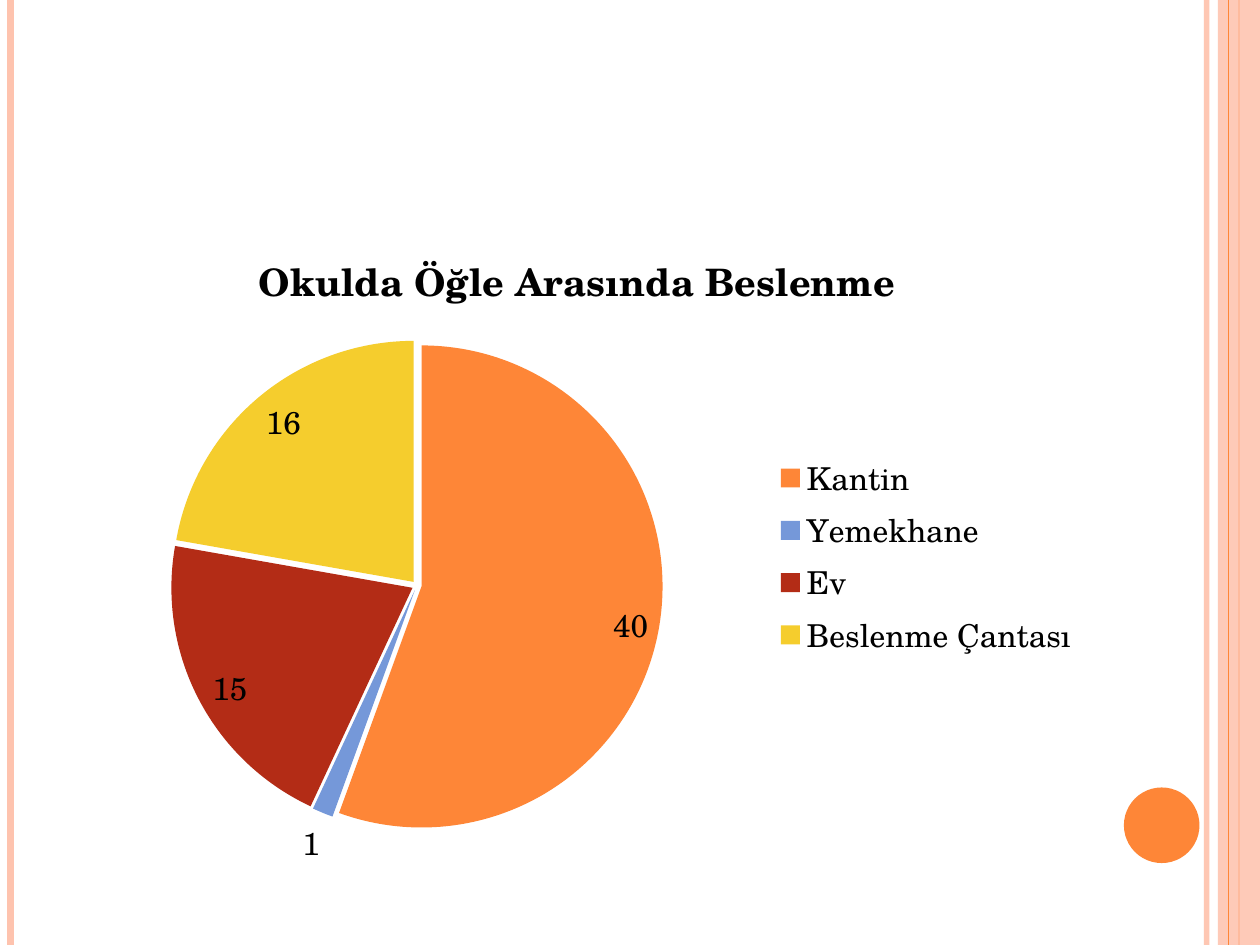
from lxml import etree
from pptx import Presentation, util as u
from pptx.chart.data import CategoryChartData
from pptx.dml.color import RGBColor
from pptx.enum import chart as charts, shapes
from pptx.oxml.ns import qn

Pt = u.Pt
FONT = "TeX Gyre Schola"
COLORS = {
    "text": "000000",
    "pale": "FEC3AE",
    "orange": "FE8637",
    "blue": "7598D9",
    "red": "B32C16",
    "yellow": "F5CD2D",
}
LUNCH = [
    ("Kantin", 40, "orange"),
    ("Yemekhane", 1, "blue"),
    ("Ev", 15, "red"),
    ("Beslenme Çantası", 16, "yellow"),
]


def rgb(name):
    return RGBColor.from_string(COLORS[name])


def set_alpha(fill_parent, percent):
    color = next(fill_parent.iter(qn("a:srgbClr")))
    etree.SubElement(color, qn("a:alpha")).set("val", str(percent * 1000))


def format_font(font, size, bold=False):
    for name, value in {"name": FONT, "size": Pt(size), "bold": bold}.items():
        setattr(font, name, value)
    font.color.rgb = rgb("text")


def add_rule(slide, x, top, height, color, width, alpha=None):
    line = slide.shapes.add_connector(
        shapes.MSO_CONNECTOR.STRAIGHT, Pt(x), Pt(top), Pt(x), Pt(top + height))
    line.line.color.rgb = rgb(color)
    line.line.width = Pt(width)
    properties = line._element.spPr
    if alpha:
        set_alpha(properties, alpha)
    etree.SubElement(properties, qn("a:effectLst"))


def add_solid(slide, kind, left, top, width, height, color):
    shape = slide.shapes.add_shape(kind, Pt(left), Pt(top), Pt(width), Pt(height))
    shape.shadow.inherit = False
    shape.fill.solid()
    shape.fill.fore_color.rgb = rgb(color)
    shape.line.fill.background()
    return shape


def add_frame(slide, left, top, width, height):
    """Draw the striped side borders and the page-number disc."""
    right = left + width
    add_rule(slide, right - 30.5, top, height, "pale", 3, alpha=93)
    add_rule(slide, left + 6, top, height, "pale", 4.5)
    add_rule(slide, right - 12, top, height, "orange", 1.5)
    band = add_solid(slide, shapes.MSO_SHAPE.RECTANGLE, right - 24, top, 24, height, "pale")
    set_alpha(band._element.spPr, 87)
    add_rule(slide, right - 18, top, height, "orange", 0.75)
    add_solid(slide, shapes.MSO_SHAPE.OVAL, right - 77.75, top + 450, 43.2, 43.2, "orange")


def add_lunch_pie(slide, left, top, width, height):
    title = "Okulda Öğle Arasında Beslenme"
    data = CategoryChartData(number_format="0")
    data.categories = [name for name, _, _ in LUNCH]
    data.add_series(title, [value for _, value, _ in LUNCH])
    chart = slide.shapes.add_chart(
        charts.XL_CHART_TYPE.PIE, Pt(left), Pt(top), Pt(width), Pt(height), data).chart
    format_font(chart.font, 18)

    chart.has_title = True
    chart.chart_title.include_in_layout = False
    chart.chart_title.text_frame.text = title
    format_font(chart.chart_title.text_frame.paragraphs[0].runs[0].font, 21.6, bold=True)

    chart.has_legend = True
    chart.legend.position = charts.XL_LEGEND_POSITION.RIGHT
    chart.legend.include_in_layout = False
    format_font(chart.legend.font, 18)

    plot = chart.plots[0]
    plot.vary_by_categories = True
    series = plot.series[0]
    for index, (_, _, color) in enumerate(LUNCH):
        fill = series.points[index].format.fill
        fill.solid()
        fill.fore_color.rgb = rgb(color)
    explosion = etree.Element(qn("c:explosion"), val="2")
    series._element.find(qn("c:dPt")).addprevious(explosion)

    labels = series.data_labels
    for name, value in {
        "show_value": True,
        "show_percentage": False,
        "number_format": "0",
        "number_format_is_linked": False,
        "position": charts.XL_LABEL_POSITION.BEST_FIT,
    }.items():
        setattr(labels, name, value)
    format_font(labels.font, 18)


def main():
    presentation = Presentation()
    presentation.slide_width, presentation.slide_height = Pt(720), Pt(540)
    slide = presentation.slides.add_slide(presentation.slide_layouts[6])
    add_frame(slide, 0, 0, 720, 540)
    add_lunch_pie(slide, 36, 126, 588, 384)
    presentation.save("out.pptx")


if __name__ == "__main__":
    main()
